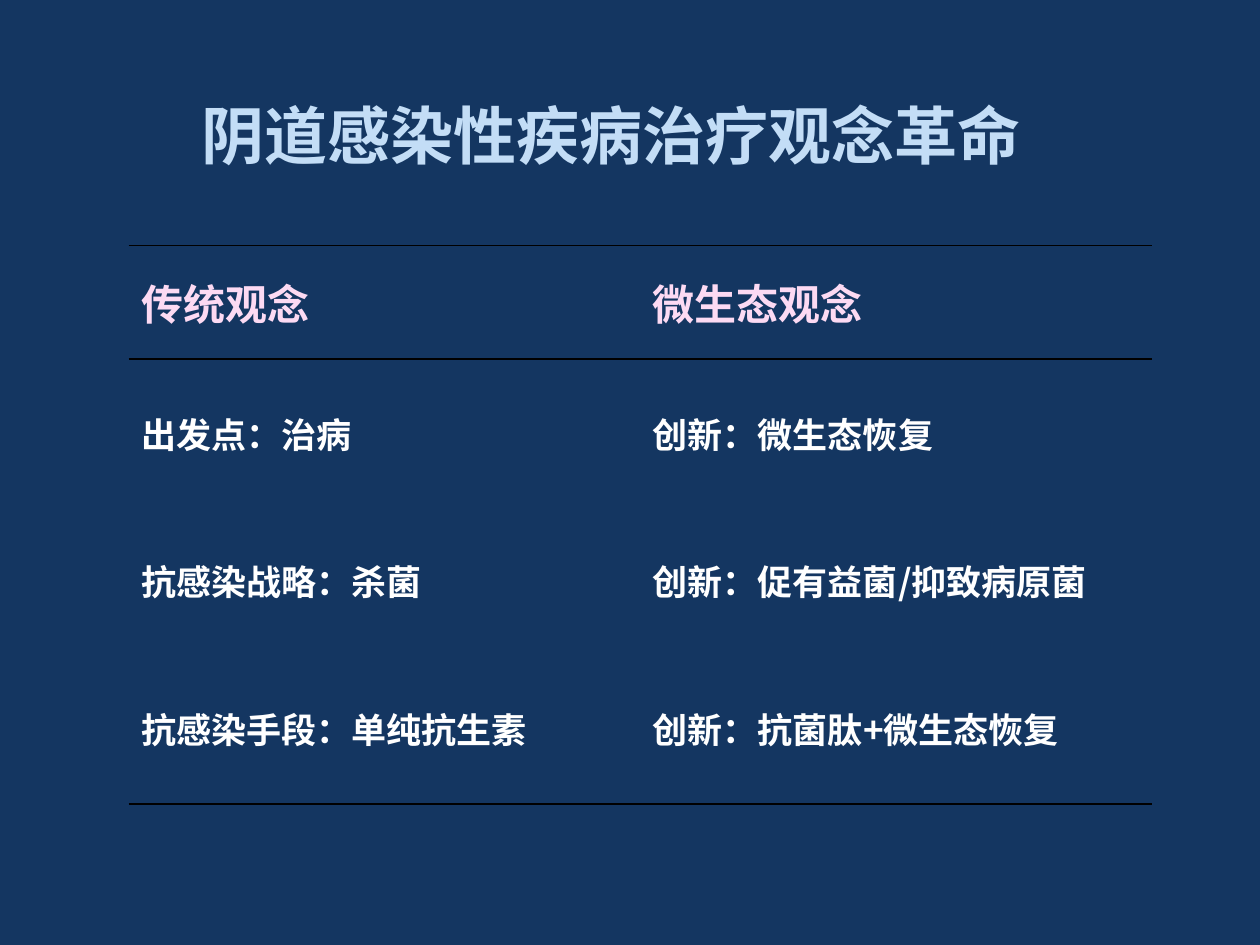
from dataclasses import dataclass

from lxml.etree import SubElement as Sub
from pptx import Presentation as Deck
from pptx.dml.color import RGBColor as Rgb
from pptx.enum.text import MSO_ANCHOR as Anchor, PP_ALIGN as Align
from pptx.oxml import parse_xml as to_xml
from pptx.oxml.ns import nsdecls, qn
from pptx.util import Inches, Pt


@dataclass(frozen=True)
class Theme:
    font: str = "Noto Sans CJK SC"
    back: str = "143661"
    title: str = "C3DDF6"
    edge: str = "69AAE9"
    head: str = "FCDAF3"
    body: str = "FFFFFF"
    rule: str = "000000"
    title_pt: int = 36
    head_pt: int = 24
    body_pt: int = 20
    edge_pt: float = 1.75
    rule_pt: int = 1


def line(tag, color, width):
    fill = f'<a:solidFill><a:srgbClr val="{color}"/></a:solidFill>' if color else "<a:noFill/>"
    return to_xml(f'<a:{tag} {nsdecls("a")} w="{Pt(width)}">{fill}</a:{tag}>')


class Page:
    """Draws styled elements on one slide."""

    def __init__(self, deck, theme):
        self.theme = theme
        self.slide = deck.slides.add_slide(deck.slide_layouts[6])
        fill = self.slide.background.fill
        fill.solid()
        fill.fore_color.rgb = Rgb.from_string(theme.back)

    def run(self, para, text, size, color):
        run = para.add_run()
        run.text = text
        font = run.font
        font.size, font.bold, font.name = Pt(size), True, self.theme.font
        font.color.rgb = Rgb.from_string(color)
        props = run._r.get_or_add_rPr()
        Sub(props, qn("a:ea")).set("typeface", self.theme.font)
        return props

    def title(self, text, left, top, width, height):
        style = self.theme
        box = self.slide.shapes.add_textbox(*map(Inches, (left, top, width, height)))
        frame = box.text_frame
        frame.word_wrap = True
        frame.vertical_anchor = Anchor.MIDDLE
        para = frame.paragraphs[0]
        para.alignment = Align.CENTER
        props = self.run(para, text, style.title_pt, style.title)
        props.insert(0, line("ln", style.edge, style.edge_pt))

    def cell(self, cell, text, size, color, ruled):
        cell.fill.background()
        cell.vertical_anchor = Anchor.MIDDLE
        para = cell.text_frame.paragraphs[0]
        props = para._p.get_or_add_pPr()
        props.set("marL", str(Inches(0.38)))
        props.set("indent", str(-Inches(0.38)))
        self.run(para, text, size, color)
        for spot, side in enumerate("LRTB"):
            shade = self.theme.rule if side in ruled else None
            edge = line(f"ln{side}", shade, self.theme.rule_pt)
            cell._tc.get_or_add_tcPr().insert(spot, edge)

    def table(self, rows, left, top, width, heights):
        style = self.theme
        spot = map(Inches, (left, top, width, sum(heights)))
        table = self.slide.shapes.add_table(len(rows), len(rows[0]), *spot).table
        table.first_row = table.horz_banding = False
        rules = {0: "TB", 1: "T", len(rows) - 1: "B"}
        for r, (row, height) in enumerate(zip(rows, heights)):
            table.rows[r].height = Inches(height)
            size, color = (style.body_pt, style.body) if r else (style.head_pt, style.head)
            for c, text in enumerate(row):
                self.cell(table.cell(r, c), text, size, color, rules.get(r, ""))


def main():
    deck = Deck()
    deck.slide_width, deck.slide_height = Inches(10), Inches(7.5)
    page = Page(deck, Theme())
    page.title("阴道感染性疾病治疗观念革命", 0.6, 0.44, 8.5, 1.25)
    rows = [
        ("传统观念", "微生态观念"),
        ("出发点：治病", "创新：微生态恢复"),
        ("抗感染战略：杀菌", "创新：促有益菌/抑致病原菌"),
        ("抗感染手段：单纯抗生素", "创新：抗菌肽+微生态恢复"),
    ]
    page.table(rows, 1.02, 1.95, 8.12, (0.9, 1.18, 1.15, 1.2))
    deck.save("out.pptx")


if __name__ == "__main__":
    main()
